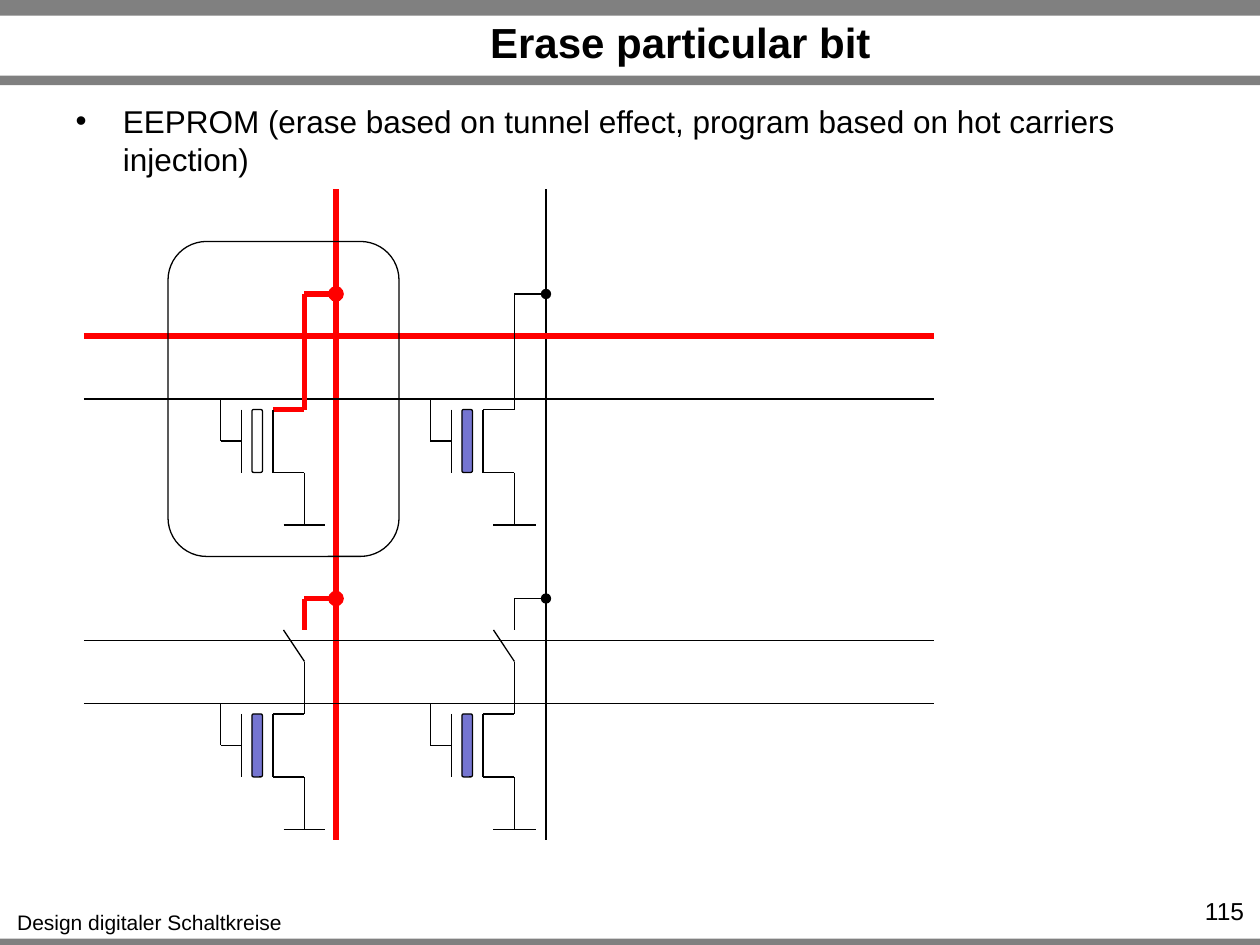
from pptx import Presentation
from pptx.dml.color import RGBColor
from pptx.enum.shapes import MSO_CONNECTOR as Link, MSO_SHAPE as Shape
from pptx.enum.text import MSO_ANCHOR as Anchor, MSO_AUTO_SIZE as Fit, PP_ALIGN as Align
from pptx.oxml.ns import qn
from pptx.util import Pt
from lxml.etree import SubElement

BLACK, RED, GREY, CHARGED = "000000", "FF0000", "808080", "7575D1"
THIN, BOLD = 0.75, 3


def rgb(value):
    return RGBColor.from_string(value)


def write(frame, text, size=18, bold=False, align=Align.LEFT,
          anchor=Anchor.TOP, wrap=True, bullet=None, indent=0):
    frame.word_wrap = wrap
    frame.auto_size = Fit.NONE
    frame.vertical_anchor = anchor
    frame.text = text
    paragraph = frame.paragraphs[0]
    if bullet:
        properties = paragraph._p.get_or_add_pPr()
        properties.set("marL", str(Pt(indent)))
        properties.set("indent", str(-Pt(indent)))
        SubElement(properties, qn("a:buChar")).set("char", bullet)
    paragraph.alignment = align
    paragraph.space_before = Pt(0)
    font = paragraph.font
    font.name, font.size, font.bold = "Arial", Pt(size), bold
    font.color.rgb = rgb(BLACK)


class Sketch:
    """Draws on the slide, or on the group that is currently open."""

    def __init__(self, slide):
        self.slide = slide
        self.shapes = slide.shapes

    def open_group(self):
        self.shapes = self.slide.shapes.add_group_shape().shapes

    def close_group(self):
        self.shapes = self.slide.shapes

    def placeholder(self, index, left, top, width, height, text, **style):
        holder = self.slide.placeholders[index]
        holder.left, holder.top = Pt(left), Pt(top)
        holder.width, holder.height = Pt(width), Pt(height)
        write(holder.text_frame, text, **style)

    def label(self, left, top, width, height, text, **style):
        box = self.shapes.add_textbox(Pt(left), Pt(top), Pt(width), Pt(height))
        write(box.text_frame, text, **style)

    def box(self, left, top, width, height, kind=Shape.RECTANGLE, fill=None, outline=None):
        shape = self.shapes.add_shape(kind, Pt(left), Pt(top), Pt(width), Pt(height))
        shape.shadow.inherit = False
        if fill:
            shape.fill.solid()
            shape.fill.fore_color.rgb = rgb(fill)
        else:
            shape.fill.background()
        if outline:
            shape.line.color.rgb = rgb(outline)
            shape.line.width = Pt(THIN)
        else:
            shape.line.fill.background()

    def wire(self, x1, y1, x2, y2, active=False, dot=False):
        line = self.shapes.add_connector(Link.STRAIGHT, Pt(x1), Pt(y1), Pt(x2), Pt(y2))
        line.line.color.rgb = rgb(RED if active else BLACK)
        line.line.width = Pt(BOLD if active else THIN)
        if dot:
            SubElement(line.line._get_or_add_ln(), qn("a:tailEnd")).set("type", "oval")
        SubElement(line._element.spPr, qn("a:effectLst"))

    def cell(self, bit_x, top, selected, closed, charged):
        """Memory transistor hanging from a bit line through its erase switch."""
        self.open_group()
        drain, channel, gate, gate_lead = (bit_x - d for d in (18, 36, 54, 66))
        word, upper, middle, lower, ground = (top + d for d in (60, 66, 84, 102, 132))
        through = selected and closed

        self.wire(drain, top, bit_x, top, selected, dot=True)
        if closed:
            self.wire(drain, top, drain, upper, selected)
        else:
            self.wire(drain, top, drain, top + 18, selected)
            self.wire(drain, top + 36, drain - 12, top + 18)
            self.wire(drain, top + 36, drain, upper)
        self.wire(channel, upper, drain, upper, through)
        self.wire(channel, upper, channel, lower)
        self.wire(channel, lower, drain, lower)
        self.wire(drain, lower, drain, ground)
        self.wire(drain - 12, ground, drain + 12, ground)
        self.wire(gate, upper, gate, lower)
        self.wire(gate, middle, gate_lead, middle)
        self.wire(gate_lead, middle, gate_lead, word)
        self.box(gate + 6, upper, 6, lower - upper, Shape.ROUNDED_RECTANGLE,
                 CHARGED if charged else None, BLACK)
        self.close_group()


def main():
    deck = Presentation()
    deck.slide_width, deck.slide_height = Pt(720), Pt(540)
    sketch = Sketch(deck.slides.add_slide(deck.slide_layouts[1]))

    for top, height in ((536.4, 5.4), (0, 9), (43.2, 5.4)):
        sketch.box(0, top, 720, height, fill=GREY)
    sketch.label(2, 516, 167, 22, "Design digitaler Schaltkreise",
                 size=12, align=Align.CENTER, wrap=False)
    sketch.placeholder(0, 93.6, 10, 590.4, 27.5, "Erase particular bit",
                       size=24, bold=True, align=Align.CENTER, anchor=Anchor.MIDDLE)
    sketch.placeholder(1, 36, 54.7, 648, 47.5,
                       "EEPROM (erase based on tunnel effect, program based on "
                       "hot carriers injection)", bullet="•", indent=27)
    sketch.label(655, 508.3, 63, 17, "115", size=14, align=Align.RIGHT)

    columns = ((192, True), (312, False))  # bit line, selected for erase
    rows = ((168, True), (342, False))  # cell top, erase line active
    for bit_x, selected in columns:
        sketch.wire(bit_x, 108, bit_x, 480, selected)
    for top, active in rows:
        sketch.wire(48, top + 24, 534, top + 24, active)
        sketch.wire(48, top + 60, 534, top + 60)
    for bit_x, selected in columns:
        for top, active in rows:
            sketch.cell(bit_x, top, selected, closed=active,
                        charged=not (selected and active))
    sketch.box(96, 138, 132, 180, Shape.ROUNDED_RECTANGLE, outline=BLACK)

    deck.save("out.pptx")


if __name__ == "__main__":
    main()
